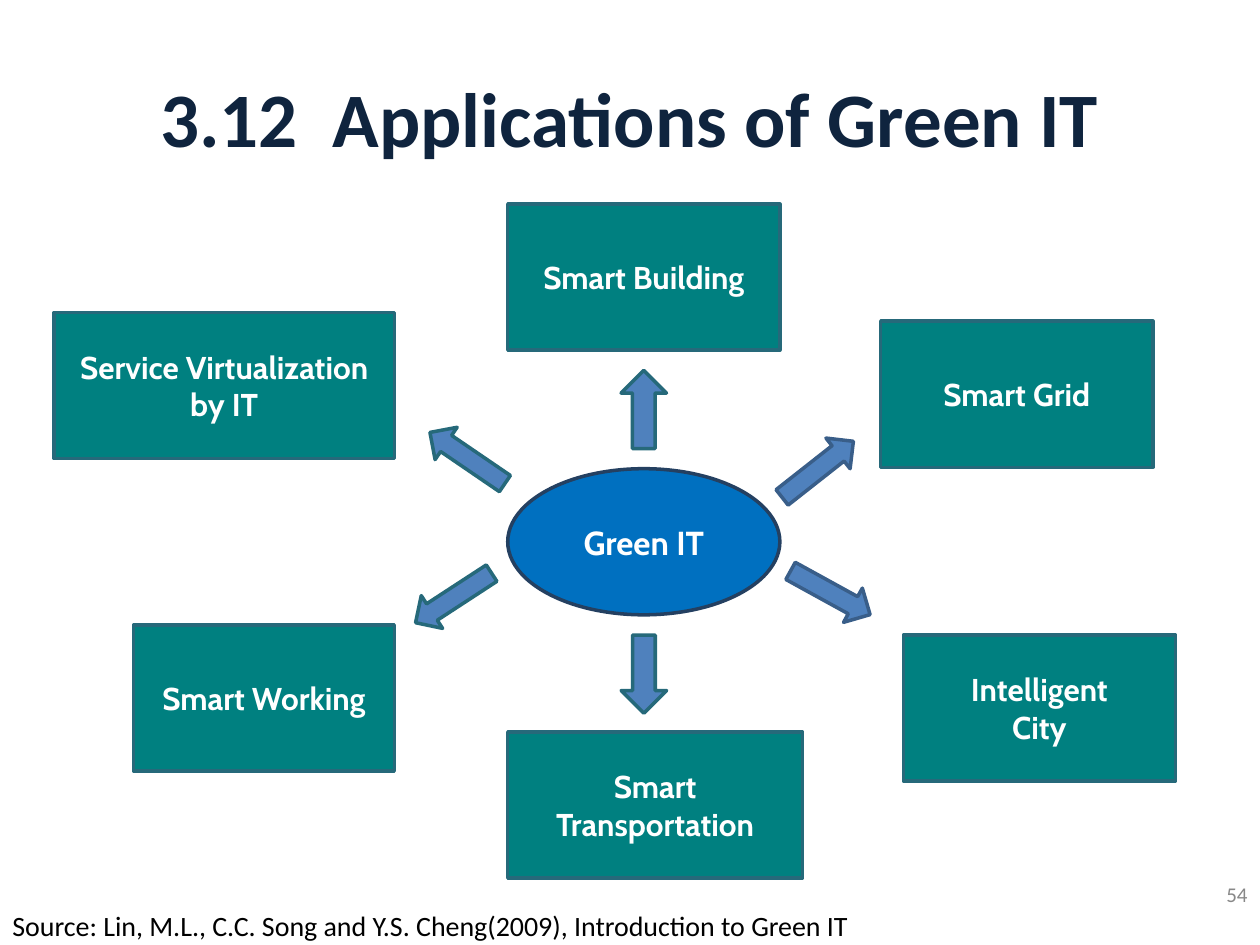
from pptx import Presentation
from pptx.dml.color import RGBColor
from pptx.enum.shapes import MSO_SHAPE
from pptx.enum.text import MSO_ANCHOR, PP_ALIGN
from pptx.util import Inches, Pt

RECTANGLE, OVAL, ARROW = MSO_SHAPE.RECTANGLE, MSO_SHAPE.OVAL, MSO_SHAPE.RIGHT_ARROW
LEFT, CENTER, RIGHT = PP_ALIGN.LEFT, PP_ALIGN.CENTER, PP_ALIGN.RIGHT
TOP, MIDDLE = MSO_ANCHOR.TOP, MSO_ANCHOR.MIDDLE

COLORS = {
    "title": "0F243E", "page": "888888", "black": "000000", "white": "FFFFFF",
    "hub": "0070C0", "hub_line": "244061",
    "application": "008080", "teal_line": "26697A",
    "arrow": "4F81BD", "blue_line": "395E89",
}
BOX_HEIGHT = 1.16

# label, left, top, width
APPLICATIONS = [
    ("Smart Transportation", 4.03, 5.81, 2.34),
    ("Intelligent\nCity", 7.17, 5.04, 2.16),
    ("Smart Grid", 6.99, 2.55, 2.16),
    ("Smart Building", 4.03, 1.62, 2.16),
    ("Service Virtualization by IT", 0.43, 2.48, 2.7),
    ("Smart Working", 1.06, 4.96, 2.07),
]

DIAGONAL, VERTICAL = (0.72, 0.31), (0.62, 0.36)
# left, top, size, rotation, line colour
ARROWS = [
    (6.23, 4.55, DIAGONAL, 28.8, "blue_line"),
    (4.8, 5.17, VERTICAL, 90, "teal_line"),
    (3.24, 4.59, DIAGONAL, 146.9, "teal_line"),
    (3.35, 3.48, DIAGONAL, 214.3, "teal_line"),
    (4.8, 3.07, VERTICAL, 270, "teal_line"),
    (6.13, 3.57, DIAGONAL, 321.8, "blue_line"),
]


def rgb(name):
    return RGBColor.from_string(COLORS[name])


class SlideBuilder:
    """Holds the fonts and the slide being filled."""

    label_font = "Cabin"
    body_font = "Calibri"

    def __init__(self, slide):
        self.slide = slide

    def fill_frame(self, frame, text, size, color, font, bold=False,
                   align=CENTER, anchor=MIDDLE, spacing=None):
        frame.word_wrap = True
        frame.vertical_anchor = anchor
        frame.text = text
        for paragraph in frame.paragraphs:
            paragraph.alignment = align
            paragraph.line_spacing = spacing
            paragraph.font.name = font
            paragraph.font.size = Pt(size)
            paragraph.font.bold = bold
            paragraph.font.color.rgb = rgb(color)

    def text(self, text, left, top, width, height, size, color, **style):
        box = self.slide.shapes.add_textbox(
            Inches(left), Inches(top), Inches(width), Inches(height))
        self.fill_frame(box.text_frame, text, size, color, self.body_font, **style)

    def shape(self, kind, left, top, width, height, fill, line):
        shape = self.slide.shapes.add_shape(
            kind, Inches(left), Inches(top), Inches(width), Inches(height))
        shape.shadow.inherit = False
        shape.fill.solid()
        shape.fill.fore_color.rgb = rgb(fill)
        shape.line.color.rgb = rgb(line)
        shape.line.width = Pt(2)
        return shape

    def node(self, kind, label, left, top, width, fill, line, size):
        node = self.shape(kind, left, top, width, BOX_HEIGHT, fill, line)
        self.fill_frame(node.text_frame, label, size, "white", self.label_font, bold=True)

    def arrow(self, left, top, size, rotation, line):
        arrow = self.shape(ARROW, left, top, *size, "arrow", line)
        arrow.rotation = rotation


def main():
    presentation = Presentation()
    presentation.slide_width = Inches(10)
    presentation.slide_height = Inches(7.5)
    blank = presentation.slide_layouts[6]
    builder = SlideBuilder(presentation.slides.add_slide(blank))

    builder.text("3.12  Applications of Green IT", 0.5, 0.3, 9, 1.25, 44, "title", bold=True)
    builder.text("54", 9.49, 6.9, 0.51, 0.4, 12, "page", align=RIGHT)

    builder.node(OVAL, "Green IT", 4.03, 3.72, 2.16, "hub", "hub_line", 19)
    for label, left, top, width in APPLICATIONS:
        builder.node(RECTANGLE, label, left, top, width, "application", "teal_line", 18)
    for arrow in ARROWS:
        builder.arrow(*arrow)

    builder.text(
        "Source: Lin, M.L., C.C. Song and Y.S. Cheng(2009), Introduction to Green IT",
        0, 7.21, 6.92, 0.32, 16, "black", align=LEFT, anchor=TOP, spacing=0.8)

    presentation.save("out.pptx")


if __name__ == "__main__":
    main()
